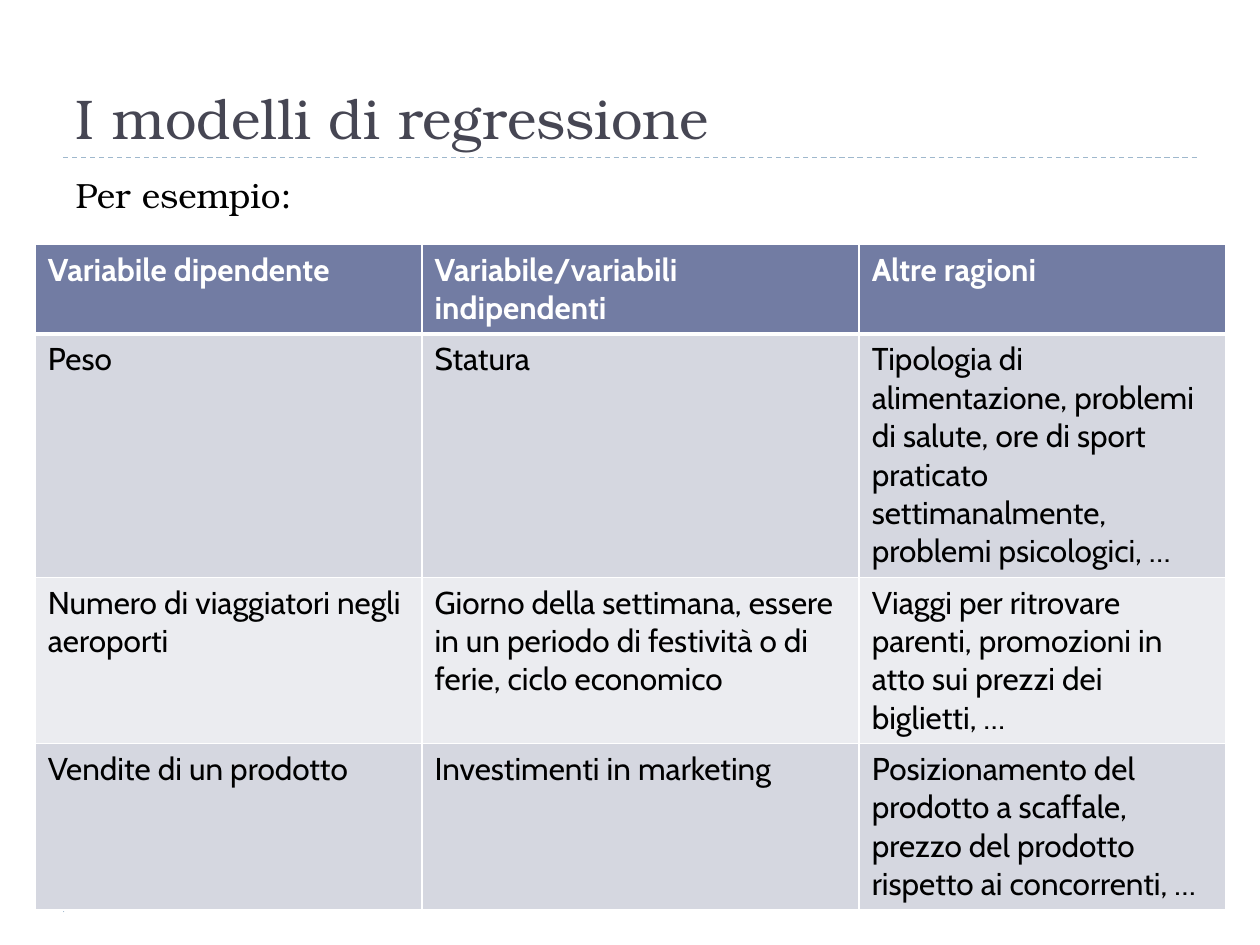
from lxml.etree import SubElement
from pptx import Presentation
from pptx.dml.color import RGBColor
from pptx.enum.dml import MSO_LINE
from pptx.enum.shapes import MSO_CONNECTOR, MSO_SHAPE
from pptx.enum.text import MSO_ANCHOR, MSO_AUTO_SIZE, PP_ALIGN
from pptx.oxml.ns import qn
from pptx.util import Inches, Pt

# Content
TITLE = "I modelli di regressione"
INTRO = "Per esempio:"
ROWS = [
    ("Variabile dipendente", "Variabile/variabili indipendenti", "Altre ragioni"),
    ("Peso", "Statura",
     "Tipologia di alimentazione, problemi di salute, ore di sport praticato "
     "settimanalmente, problemi psicologici, …"),
    ("Numero di viaggiatori negli aeroporti",
     "Giorno della settimana, essere in un periodo di festività o di ferie, "
     "ciclo economico",
     "Viaggi per ritrovare parenti, promozioni in atto sui prezzi dei biglietti, …"),
    ("Vendite di un prodotto", "Investimenti in marketing",
     "Posizionamento del prodotto a scaffale, prezzo del prodotto rispetto ai "
     "concorrenti, …"),
]
COLUMN_WIDTHS = (3.07, 3.47, 2.91)
ROW_HEIGHT = 0.41  # minimum: rows grow with their text
TABLE_HEIGHT = 4.6

COLORS = {
    "title": "464653", "text": "000000", "accent": "9FB8CD", "white": "FFFFFF",
    "header": "727CA3", "odd": "D5D7E0", "even": "EBECF0",
}
SERIF, SANS = "TeX Gyre Bonum", "Cabin"


def color(name):
    return RGBColor.from_string(COLORS[name])


def add_run(paragraph, text, font, size, color_name, bold=False):
    run = paragraph.add_run()
    run.text = text
    run.font.name = font
    run.font.size = Pt(size)
    run.font.bold = bold
    run.font.color.rgb = color(color_name)


def place(shape, left, top, width, height):
    shape.left, shape.top = Inches(left), Inches(top)
    shape.width, shape.height = Inches(width), Inches(height)


def set_borders(cell, bottom_width):
    properties = cell._tc.get_or_add_tcPr()
    widths = {"a:lnL": 1, "a:lnR": 1, "a:lnT": 1, "a:lnB": bottom_width}
    for position, (tag, width) in enumerate(widths.items()):
        line = SubElement(properties, qn(tag), w=str(Pt(width)))
        fill = SubElement(line, qn("a:solidFill"))
        SubElement(fill, qn("a:srgbClr"), val=COLORS["white"])
        properties.insert(position, line)


presentation = Presentation()
presentation.slide_width, presentation.slide_height = Inches(10), Inches(7.5)
slide = presentation.slides.add_slide(presentation.slide_layouts[1])

# Title
title = slide.shapes.title
place(title, 0.5, 0.17, 9, 1.08)
title.text_frame.auto_size = MSO_AUTO_SIZE.NONE
title.text_frame.vertical_anchor = MSO_ANCHOR.BOTTOM
paragraph = title.text_frame.paragraphs[0]
paragraph.alignment = PP_ALIGN.LEFT
add_run(paragraph, TITLE, SERIF, 32, "title")

# Introductory line
body = slide.placeholders[1]
place(body, 0.5, 1.33, 9, 5.17)
body.text_frame.auto_size = MSO_AUTO_SIZE.NONE
paragraph = body.text_frame.paragraphs[0]
paragraph.alignment = PP_ALIGN.JUSTIFY
paragraph.space_before = Pt(0)
properties = paragraph._p.get_or_add_pPr()
properties.set("marL", "0")
properties.set("indent", "0")
SubElement(properties, qn("a:buNone"))
add_run(paragraph, INTRO, SERIF, 20, "text")

# Dashed rule under the title
rule = slide.shapes.add_connector(
    MSO_CONNECTOR.STRAIGHT, Inches(0.5), Inches(1.25), Inches(9.5), Inches(1.25))
rule.line.color.rgb = color("accent")
rule.line.width = Pt(0.75)
rule.line.dash_style = MSO_LINE.DASH
SubElement(rule._element.spPr, qn("a:effectLst"))

# Footer marker
marker = slide.shapes.add_shape(
    MSO_SHAPE.ISOSCELES_TRIANGLE, Inches(0.46), Inches(7.07), Inches(0.21), Inches(0.13))
marker.rotation = 90
marker.shadow.inherit = False
marker.fill.solid()
marker.fill.fore_color.rgb = color("accent")
marker.line.fill.background()

# Table
frame = slide.shapes.add_table(
    len(ROWS), len(COLUMN_WIDTHS), Inches(0.28), Inches(1.94),
    Inches(sum(COLUMN_WIDTHS)), Inches(TABLE_HEIGHT))
table = frame.table
for column, width in zip(table.columns, COLUMN_WIDTHS):
    column.width = Inches(width)
for row_index, texts in enumerate(ROWS):
    is_header = row_index == 0
    table.rows[row_index].height = Inches(ROW_HEIGHT)
    fill_name = "header" if is_header else ("odd" if row_index % 2 else "even")
    for column_index, text in enumerate(texts):
        cell = table.cell(row_index, column_index)
        cell.fill.solid()
        cell.fill.fore_color.rgb = color(fill_name)
        set_borders(cell, 3 if is_header else 1)
        add_run(cell.text_frame.paragraphs[0], text, SANS, 18,
                "white" if is_header else "text", is_header)
frame.height = Inches(TABLE_HEIGHT)

presentation.save("out.pptx")
